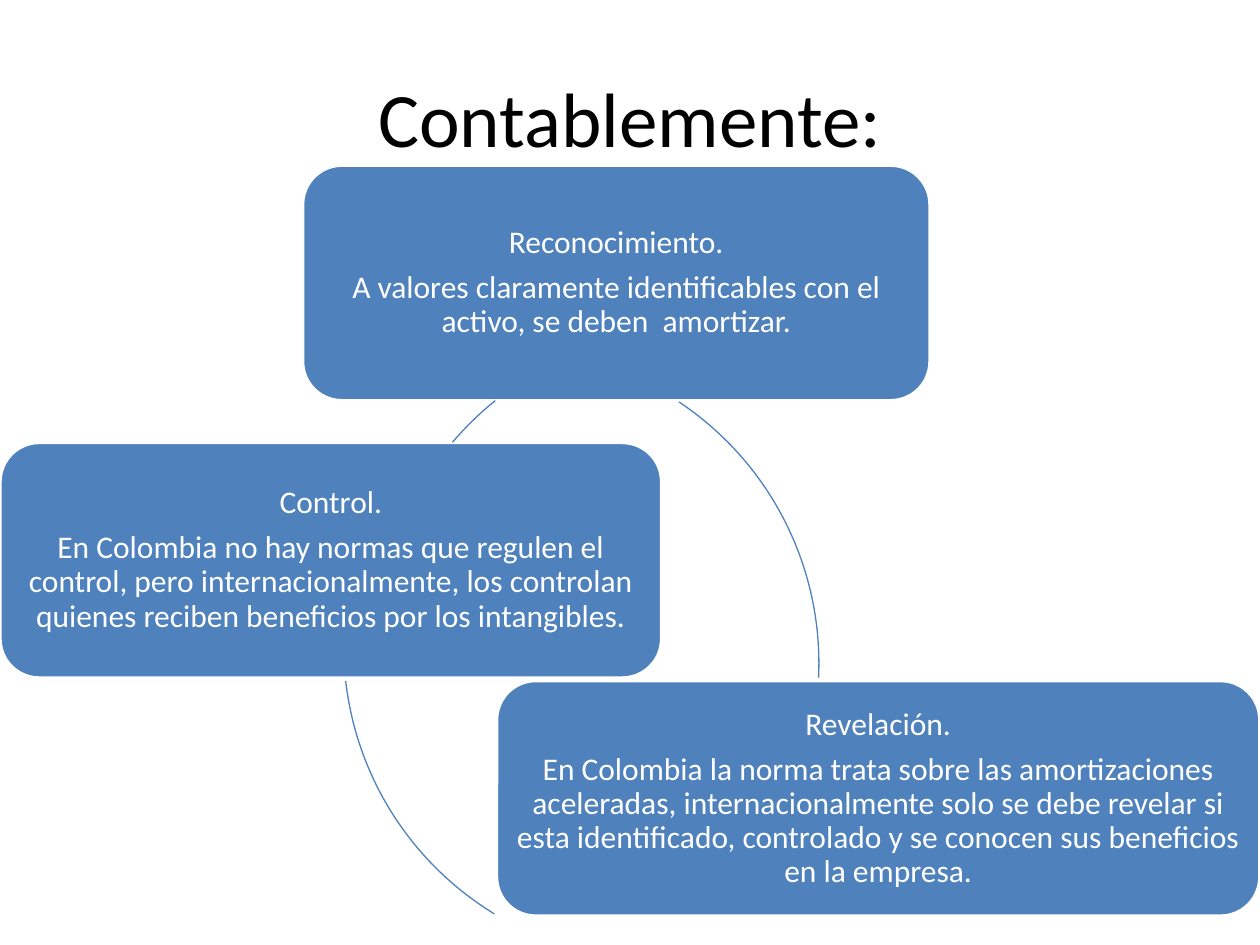
import pptx
import pptx.util
import pptx.dml.color
import pptx.enum.shapes
import pptx.enum.text

Cm, Pt = pptx.util.Cm, pptx.util.Pt
Kind = pptx.enum.shapes.MSO_SHAPE
Align = pptx.enum.text.PP_ALIGN
Anchor = pptx.enum.text.MSO_ANCHOR

# Content: each step has a box (left, top, width in cm)
# and an arc after it (left, top in cm, start and end in degrees)
TITLE = "Contablemente:"
STEPS = [
    {"head": "Reconocimiento.",
     "body": "A valores claramente identificables con el activo, se deben  amortizar.",
     "box": (6.1, 3.33, 12.65), "arc": (3.84, 7.04, 303.7, 2.6)},
    {"head": "Revelación.",
     "body": "En Colombia la norma trata sobre las amortizaciones aceleradas, "
             "internacionalmente solo se debe revelar si esta identificado, "
             "controlado y se conocen sus beneficios en la empresa.",
     "box": (10.01, 13.72, 15.39), "arc": (6.93, 6.68, 121.4, 173.5)},
    {"head": "Control.",
     "body": "En Colombia no hay normas que regulen el control, pero "
             "internacionalmente, los controlan quienes reciben beneficios "
             "por los intangibles.",
     "box": (0, 8.92, 13.34), "arc": (7.62, 6.68, 220.3, 231.2)},
]
COLORS = {"blue": "4F81BD", "white": "FFFFFF", "black": "000000"}
FONT = "Calibri"
HIGH = 4.75   # box height
RING = 12.67  # circle diameter
INSET = 0.18


def color(name):
    return pptx.dml.color.RGBColor.from_string(COLORS[name])


def style(para, size, name):
    para.alignment = Align.CENTER
    para.font.name = FONT
    para.font.size = Pt(size)
    para.font.color.rgb = color(name)


def add_shape(slide, kind, place, line, width):
    shape = slide.shapes.add_shape(kind, *map(Cm, place))
    shape.shadow.inherit = False
    shape.line.color.rgb = color(line)
    shape.line.width = Pt(width)
    return shape


def add_box(slide, step):
    box = add_shape(slide, Kind.ROUNDED_RECTANGLE, (*step["box"], HIGH), "white", 2)
    box.fill.solid()
    box.fill.fore_color.rgb = color("blue")
    frame = box.text_frame
    frame.word_wrap = True
    frame.vertical_anchor = Anchor.MIDDLE
    frame.margin_left = frame.margin_right = Cm(INSET)
    frame.margin_top = frame.margin_bottom = Cm(INSET)
    frame.text = step["head"] + "\n" + step["body"]
    for para in frame.paragraphs:
        style(para, 18, "white")
        para.line_spacing = 0.9
        para.space_after = Pt(6.3)


def add_arc(slide, step):
    left, top, *ends = step["arc"]
    arc = add_shape(slide, Kind.ARC, (left, top, RING, RING), "blue", 0.75)
    arc.fill.background()
    # An adjustment of 0.6 is one degree
    for i, angle in enumerate(ends):
        arc.adjustments[i] = angle * 0.6


def main():
    deck = pptx.Presentation()
    deck.slide_width, deck.slide_height = Cm(25.4), Cm(19.05)
    slide = deck.slides.add_slide(deck.slide_layouts[5])

    # Title
    title = slide.shapes.title
    title.left, title.top, title.width, title.height = map(Cm, (1.27, 0.76, 22.86, 3.18))
    title.text_frame.text = TITLE
    title.text_frame.vertical_anchor = Anchor.MIDDLE
    style(title.text_frame.paragraphs[0], 44, "black")

    # Cycle of steps
    for step in STEPS:
        add_box(slide, step)
        add_arc(slide, step)

    deck.save("out.pptx")


if __name__ == "__main__":
    main()
